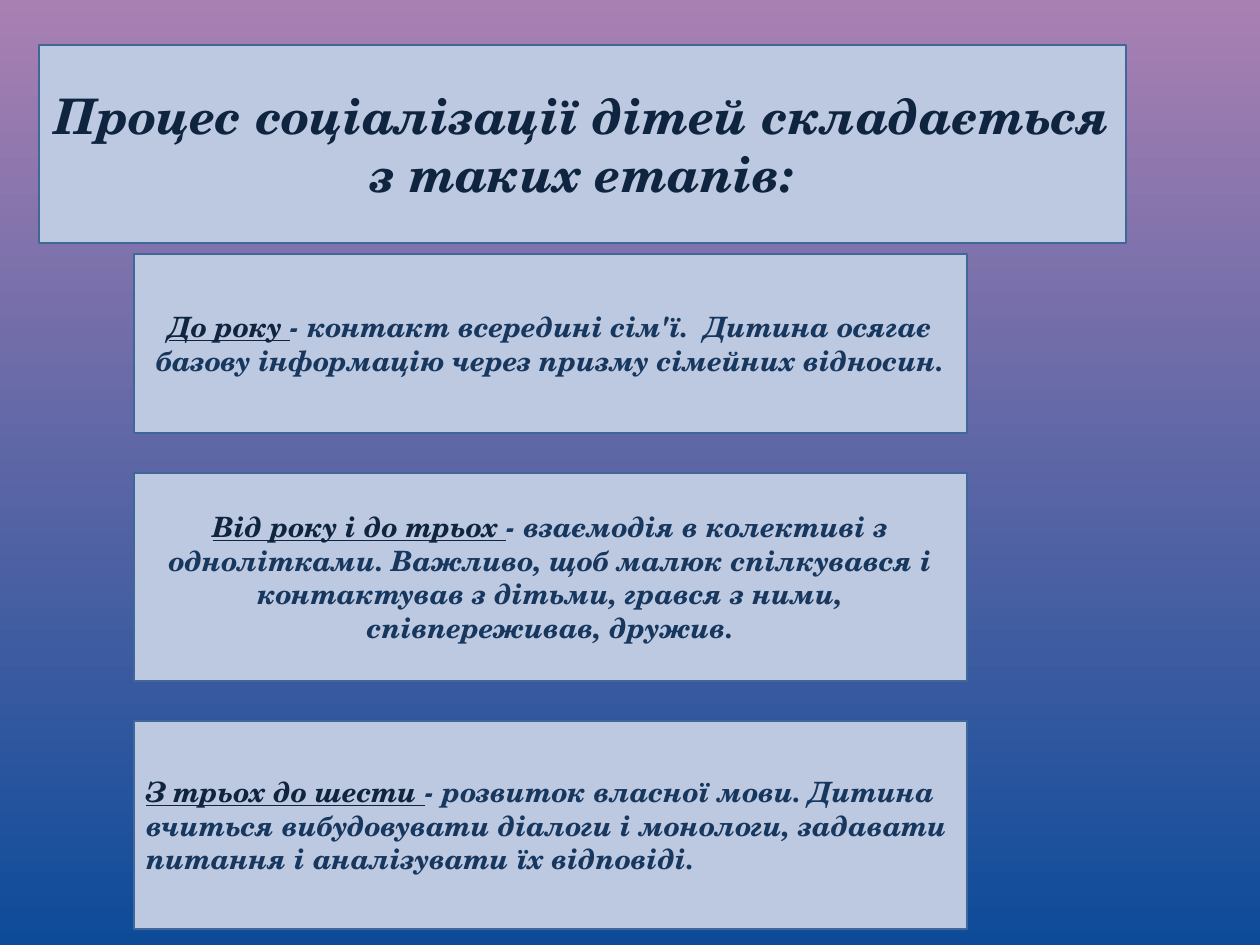
from dataclasses import dataclass

from pptx import Presentation
from pptx.dml.color import RGBColor
from pptx.enum.shapes import MSO_SHAPE
from pptx.enum.text import MSO_ANCHOR, MSO_AUTO_SIZE, PP_ALIGN
from pptx.shapes.autoshape import Shape
from pptx.slide import Slide
from pptx.text.text import _Run as Run
from pptx.util import Emu, Pt

PX = 914400 / 126
FONT = "TeX Gyre Schola"

PLUM = RGBColor(0xA9, 0x80, 0xB2)
BLUE = RGBColor(0x0D, 0x4B, 0x99)
PALE = RGBColor(0xBC, 0xC9, 0xE1)
EDGE = RGBColor(0x3F, 0x67, 0x97)
INK = RGBColor(0x0F, 0x24, 0x3E)
NAVY = RGBColor(0x17, 0x37, 0x5E)

TITLE = "Процес соціалізації дітей складається з таких етапів:"
LEFT, TOP, WIDTH, GAP = 134, 254, 833, 40


@dataclass
class Stage:
    age: str
    lines: list[str]
    height: int
    align: PP_ALIGN = PP_ALIGN.CENTER


STAGES = [
    Stage("До року ",
          ["- контакт всередині сім'ї.  Дитина осягає базову інформацію "
           "через призму сімейних відносин."], 179),
    Stage("Від року і до трьох ",
          ["- взаємодія в колективі з однолітками. Важливо, щоб малюк "
           "спілкувався і контактував з дітьми, грався з ними,",
           "співпереживав, дружив."], 208),
    Stage("З трьох до шести ",
          ["- розвиток власної мови. Дитина вчиться вибудовувати діалоги "
           "і монологи, задавати питання і аналізувати їх відповіді."],
          208, PP_ALIGN.LEFT),
]


def px(n: int) -> Emu:
    return Emu(round(n * PX))


def style(run: Run, size: int, color: RGBColor, under: bool = False) -> None:
    font = run.font
    font.name, font.size = FONT, Pt(size)
    font.bold = font.italic = True
    font.underline = under
    font.color.rgb = color


def panel(shape: Shape) -> None:
    """Give a shape the pale fill, thin edge and middle anchor."""
    shape.fill.solid()
    shape.fill.fore_color.rgb = PALE
    shape.line.color.rgb = EDGE
    shape.line.width = Pt(0.75)
    frame = shape.text_frame
    frame.word_wrap = True
    frame.auto_size = MSO_AUTO_SIZE.NONE
    frame.vertical_anchor = MSO_ANCHOR.MIDDLE


def head(slide: Slide) -> None:
    box = slide.shapes.title
    box.left, box.top, box.width, box.height = map(px, (39, 45, 1087, 198))
    panel(box)
    box.text_frame.text = TITLE
    para = box.text_frame.paragraphs[0]
    para.alignment = PP_ALIGN.CENTER
    style(para.runs[0], 28, INK)


def draw(slide: Slide, stage: Stage, top: int) -> None:
    box = slide.shapes.add_shape(MSO_SHAPE.RECTANGLE, px(LEFT), px(top),
                                 px(WIDTH), px(stage.height))
    box.shadow.inherit = False
    panel(box)
    frame = box.text_frame
    frame.text = stage.age
    style(frame.paragraphs[0].runs[0], 16, INK, True)
    for i, line in enumerate(stage.lines):
        para = frame.add_paragraph() if i else frame.paragraphs[0]
        para.alignment = stage.align
        run = para.add_run()
        run.text = line
        style(run, 16, NAVY)


def main() -> None:
    deck = Presentation()
    deck.slide_width, deck.slide_height = px(1260), px(945)
    slide = deck.slides.add_slide(deck.slide_layouts[5])

    # Background, plum at the top to blue at the bottom
    fill = slide.background.fill
    fill.gradient()
    fill.gradient_angle = 270
    for stop, color in zip(fill.gradient_stops, (PLUM, BLUE)):
        stop.color.rgb = color

    # Title panel
    head(slide)

    # Stages, stacked with equal gaps
    top = TOP
    for stage in STAGES:
        draw(slide, stage, top)
        top += stage.height + GAP

    deck.save("out.pptx")


if __name__ == "__main__":
    main()
